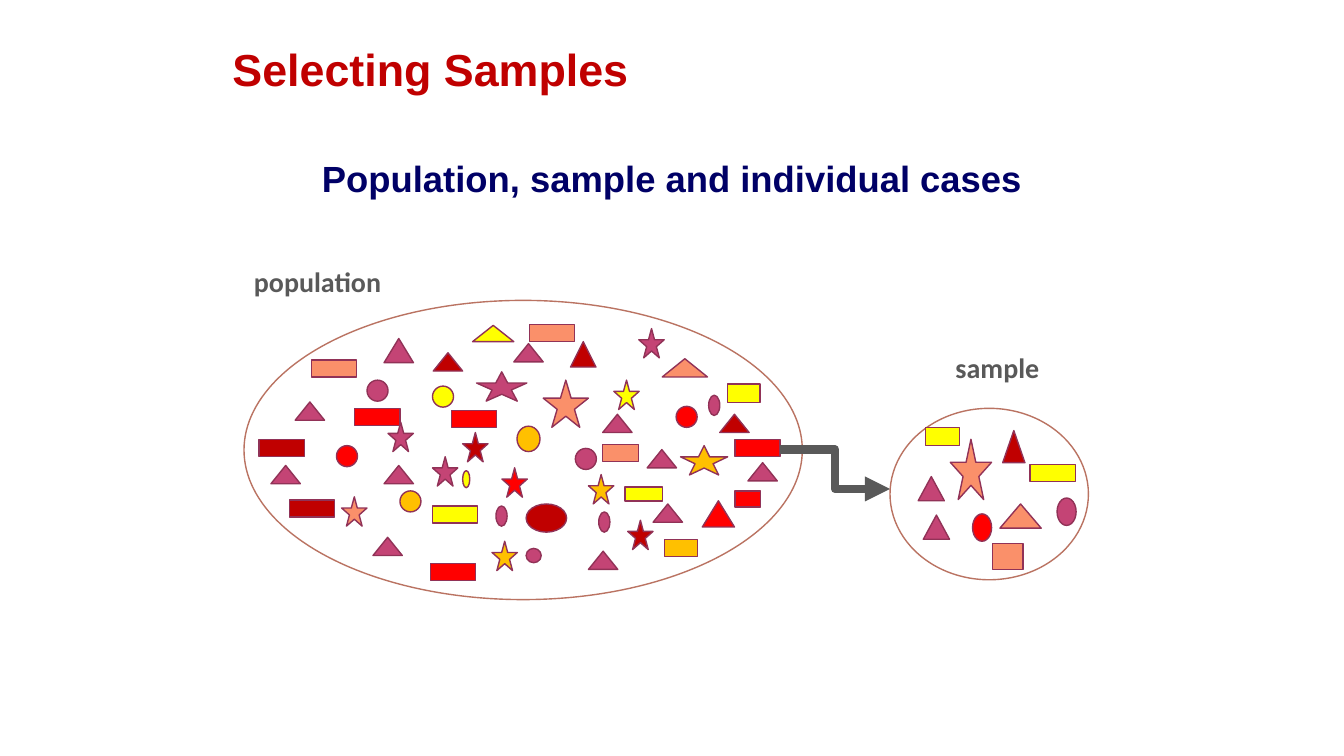
from dataclasses import dataclass

from lxml.etree import SubElement
from pptx import Presentation
from pptx.dml.color import RGBColor
from pptx.enum.shapes import MSO_CONNECTOR as Connector, MSO_SHAPE as Shape
from pptx.enum.text import MSO_ANCHOR as Anchor, PP_ALIGN as Align
from pptx.oxml.ns import qn
from pptx.util import Cm, Pt


@dataclass(frozen=True)
class Theme:
    white: str = "FFFFFF"
    crimson: str = "C00000"
    red: str = "FF0000"
    plum: str = "C44475"
    salmon: str = "FA906A"
    amber: str = "FFC000"
    yellow: str = "FFFF00"
    case_line: str = "913257"
    group_line: str = "BA7362"
    navy: str = "000066"
    grey: str = "595959"
    title_size: int = 32
    subtitle_size: int = 26
    label_size: int = 20
    heading_font: str = "Arial"
    label_font: str = "Calibri"


theme = Theme()
presentation = Presentation()
presentation.slide_width = Cm(33.87)
presentation.slide_height = Cm(19.05)
slide = presentation.slides.add_slide(presentation.slide_layouts[6])


def add_figure(kind, box, fill, line):
    shape = slide.shapes.add_shape(kind, *map(Cm, box))
    shape.shadow.inherit = False
    shape.fill.solid()
    shape.fill.fore_color.rgb = RGBColor.from_string(fill)
    shape.line.color.rgb = RGBColor.from_string(line)
    shape.line.width = Pt(1)
    return shape


def add_text(text, box, font, size, color, spacing, align=Align.LEFT, anchor=Anchor.TOP):
    shape = slide.shapes.add_textbox(*map(Cm, box))
    frame = shape.text_frame
    frame.word_wrap = True
    frame.vertical_anchor = anchor
    paragraph = frame.paragraphs[0]
    paragraph.alignment = align
    paragraph.line_spacing = spacing
    run = paragraph.add_run()
    run.text = text
    run.font.name = font
    run.font.size = Pt(size)
    run.font.bold = True
    run.font.color.rgb = RGBColor.from_string(color)


add_text("Selecting Samples", (5.61, 1.07, 21.59, 1.47), theme.heading_font,
         theme.title_size, theme.crimson, 0.9, anchor=Anchor.BOTTOM)
add_text("Population, sample and individual cases", (6.15, 3.94, 21.59, 13.84),
         theme.heading_font, theme.subtitle_size, theme.navy, 0.9, align=Align.CENTER)

for group_box in ((22.43, 10.29, 5, 4.32), (6.15, 7.57, 14.07, 7.54)):
    add_figure(Shape.OVAL, group_box, theme.white, theme.group_line)

STAR, CIRCLE = Shape.STAR_5_POINT, Shape.FLOWCHART_CONNECTOR
TRIANGLE, BLOCK = Shape.ISOSCELES_TRIANGLE, Shape.RECTANGLE

population_cases = [
    (STAR, 0.64, 0.74, theme.plum, [(9.78, 10.64), (16.1, 8.28), (10.9, 11.51)]),
    (STAR, 0.64, 0.74, theme.yellow, [(15.47, 9.58)]),
    (STAR, 0.64, 0.74, theme.amber, [(14.83, 11.96), (12.4, 13.64)]),
    (STAR, 0.64, 0.74, theme.crimson, [(11.66, 10.9), (15.82, 13.11)]),
    (STAR, 0.64, 0.74, theme.salmon, [(8.61, 12.52)]),
    (STAR, 0.64, 0.74, theme.red, [(12.65, 11.79)]),
    (STAR, 1.27, 0.74, theme.plum, [(12.01, 9.37)]),
    (STAR, 1.14, 1.19, theme.salmon, [(13.69, 9.58)]),
    (STAR, 1.19, 0.74, theme.amber, [(17.15, 11.23)]),
    (CIRCLE, 0.53, 0.53, theme.plum, [(9.25, 9.58), (14.5, 11.3)]),
    (CIRCLE, 0.53, 0.53, theme.amber, [(10.08, 12.37)]),
    (CIRCLE, 0.53, 0.53, theme.yellow, [(10.9, 9.73)]),
    (CIRCLE, 0.53, 0.53, theme.red, [(8.48, 11.23), (17.04, 10.24)]),
    (CIRCLE, 0.28, 0.51, theme.plum, [(17.86, 9.96), (12.5, 12.75), (15.09, 12.9)]),
    (CIRCLE, 0.18, 0.43, theme.yellow, [(11.66, 11.86)]),
    (CIRCLE, 0.58, 0.64, theme.amber, [(13.03, 10.74)]),
    (CIRCLE, 0.38, 0.36, theme.plum, [(13.26, 13.82)]),
    (CIRCLE, 1.02, 0.71, theme.crimson, [(13.26, 12.7)]),
    (TRIANGLE, 0.74, 0.46, theme.plum, [
        (12.95, 8.66), (7.44, 10.13), (9.4, 13.54), (15.19, 10.44), (16.31, 11.33),
        (14.83, 13.89), (16.46, 12.7), (18.85, 11.66), (6.83, 11.73), (9.68, 11.73)]),
    (TRIANGLE, 0.74, 0.46, theme.crimson, [(18.14, 10.44), (10.92, 8.89)]),
    (TRIANGLE, 1.14, 0.46, theme.salmon, [(16.69, 9.04)]),
    (TRIANGLE, 0.64, 0.64, theme.crimson, [(14.38, 8.61)]),
    (TRIANGLE, 0.81, 0.66, theme.red, [(17.7, 12.62)]),
    (TRIANGLE, 0.74, 0.61, theme.plum, [(9.68, 8.53)]),
    (TRIANGLE, 1.04, 0.41, theme.yellow, [(11.91, 8.2)]),
    (BLOCK, 1.14, 0.43, theme.salmon, [(7.85, 9.07), (13.34, 8.18)]),
    (BLOCK, 1.14, 0.43, theme.crimson, [(6.53, 11.07), (7.29, 12.6)]),
    (BLOCK, 1.14, 0.43, theme.red, [
        (8.94, 10.29), (11.38, 10.34), (18.52, 11.07), (10.85, 14.2)]),
    (BLOCK, 1.14, 0.43, theme.yellow, [(10.9, 12.75)]),
    (BLOCK, 0.64, 0.41, theme.red, [(18.52, 12.37)]),
    (BLOCK, 0.81, 0.46, theme.yellow, [(18.34, 9.68)]),
    (BLOCK, 0.91, 0.43, theme.salmon, [(15.19, 11.2)]),
    (BLOCK, 0.84, 0.43, theme.amber, [(16.74, 13.59)]),
    (BLOCK, 0.94, 0.36, theme.yellow, [(15.75, 12.27)]),
]
sample_cases = [
    (STAR, 1.04, 1.52, theme.salmon, [(23.95, 11.07)]),
    (CIRCLE, 0.48, 0.69, theme.plum, [(26.64, 12.55)]),
    (CIRCLE, 0.48, 0.69, theme.red, [(24.51, 12.95)]),
    (TRIANGLE, 1.04, 0.61, theme.salmon, [(25.2, 12.7)]),
    (TRIANGLE, 0.56, 0.81, theme.crimson, [(25.27, 10.85)]),
    (TRIANGLE, 0.66, 0.61, theme.plum, [(23.14, 12.01), (23.27, 12.98)]),
    (BLOCK, 0.76, 0.66, theme.salmon, [(25.02, 13.69)]),
    (BLOCK, 0.86, 0.46, theme.yellow, [(23.32, 10.77)]),
    (BLOCK, 1.14, 0.43, theme.yellow, [(25.96, 11.71)]),
]
for kind, width, height, fill, places in population_cases + sample_cases:
    for left, top in places:
        add_figure(kind, (left, top, width, height), fill, theme.case_line)

for label, label_box in (("population", (6.15, 6.48, 4.27, 1.09)),
                         ("sample", (23.83, 8.64, 2.82, 1.09))):
    add_text(label, label_box, theme.label_font, theme.label_size, theme.grey, 1.07)

arrow = slide.shapes.add_connector(
    Connector.ELBOW, Cm(19.66), Cm(11.33), Cm(22.43), Cm(12.32))
arrow.line.color.rgb = RGBColor.from_string(theme.grey)
arrow.line.width = Pt(6)
arrow_properties = arrow._element.spPr
SubElement(arrow_properties.find(qn("a:ln")), qn("a:tailEnd"), type="triangle")
SubElement(arrow_properties, qn("a:effectLst"))

presentation.save("out.pptx")
